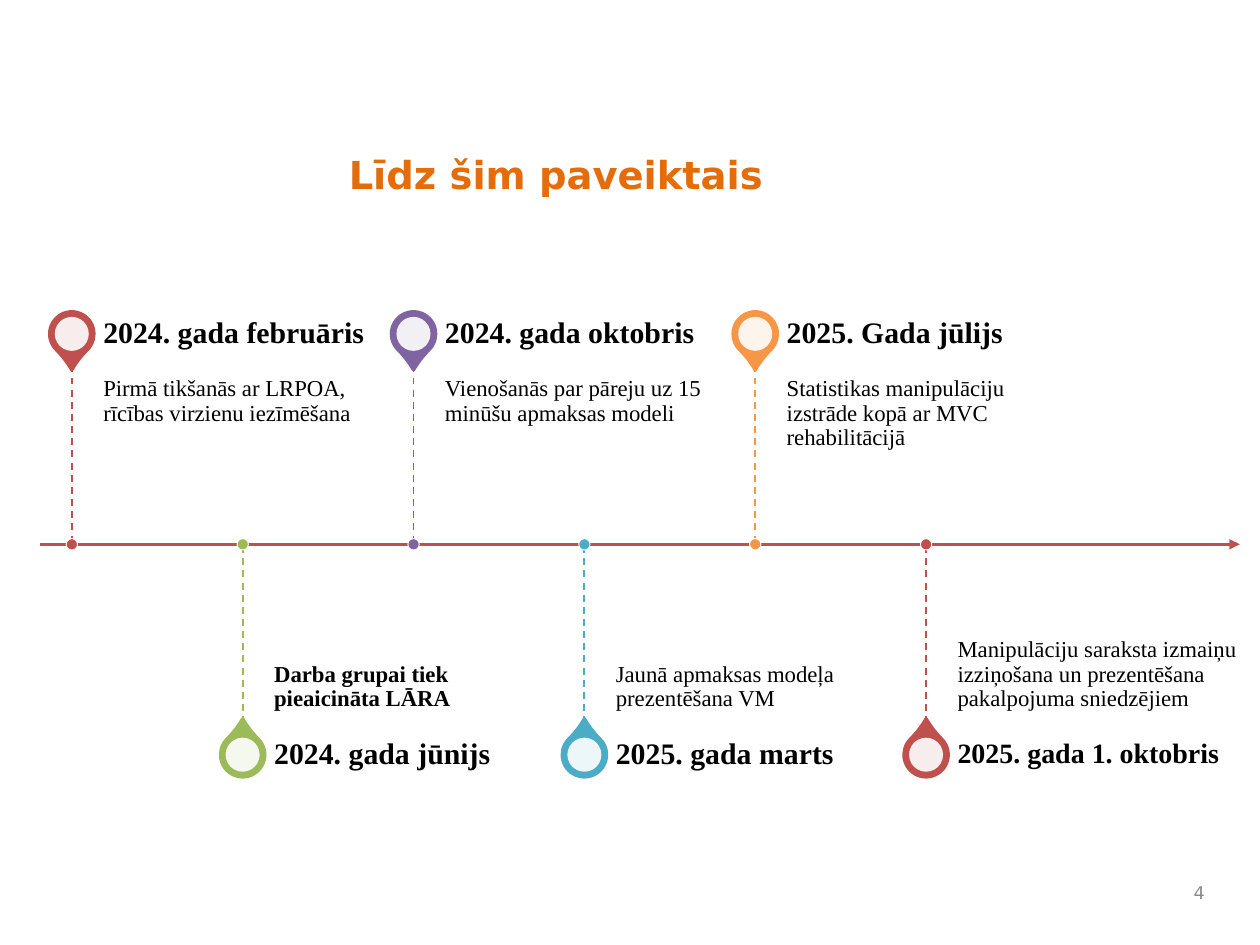
from dataclasses import dataclass

import lxml.etree
import pptx
import pptx.dml.color
import pptx.enum.dml
import pptx.enum.shapes
import pptx.enum.text
import pptx.oxml.ns
import pptx.util

Inches = pptx.util.Inches
Pt = pptx.util.Pt
qn = pptx.oxml.ns.qn
Anchor = pptx.enum.text.MSO_ANCHOR
Align = pptx.enum.text.PP_ALIGN
Preset = pptx.enum.shapes.MSO_SHAPE

COLORS = {
    "title": "E46C0A", "text": "000000", "page": "898989", "white": "FFFFFF",
    "red": "C0504D", "green": "9BBB59", "purple": "8064A2",
    "teal": "4BACC6", "orange": "F79646",
}
SANS = "DejaVu Sans"
SERIF = "Times New Roman"

AXIS_Y = 4.32
FIRST_X, LAST_X = 0.57, 7.35
STEM = 1.42            # from the axis to the date row
DATE_HEIGHT = 0.5
TEXT_WIDTH = 2.23
TEXT_GAP = 0.25        # from the stem to its text
PIN_OFFSET = 0.25      # from the end of the stem to the pin centre
PIN, PIN_HOLE, DOT = 0.35, 0.27, 0.09


@dataclass
class Milestone:
    date: str
    description: str
    color: str
    date_size: int = 17
    bold_description: bool = False


@dataclass
class TextStyle:
    size: int
    font: str = SERIF
    color: str = "text"
    bold: bool = False
    anchor: Anchor = Anchor.TOP
    align: Align = Align.LEFT
    insets: tuple[float, float, float, float] = (0.1, 0.05, 0.1, 0.05)
    line_spacing: float = 1.0


MILESTONES = [
    Milestone("2024. gada februāris",
              "Pirmā tikšanās ar LRPOA, rīcības virzienu iezīmēšana", "red"),
    Milestone("2024. gada jūnijs", "Darba grupai tiek pieaicināta LĀRA",
              "green", bold_description=True),
    Milestone("2024. gada oktobris",
              "Vienošanās par pāreju uz 15 minūšu apmaksas modeli", "purple"),
    Milestone("2025. gada marts", "Jaunā apmaksas modeļa prezentēšana VM", "teal"),
    Milestone("2025. Gada jūlijs",
              "Statistikas manipulāciju izstrāde kopā ar MVC rehabilitācijā", "orange"),
    Milestone("2025. gada 1. oktobris",
              "Manipulāciju saraksta izmaiņu izziņošana un prezentēšana "
              "pakalpojuma sniedzējiem", "red", date_size=16),
]


def rgb(name: str) -> pptx.dml.color.RGBColor:
    return pptx.dml.color.RGBColor.from_string(COLORS[name])


def add_text(slide, text: str, left: float, top: float, width: float,
             height: float, style: TextStyle) -> None:
    box = slide.shapes.add_textbox(Inches(left), Inches(top), Inches(width), Inches(height))
    frame = box.text_frame
    frame.word_wrap = True
    frame.vertical_anchor = style.anchor
    (frame.margin_left, frame.margin_top, frame.margin_right,
     frame.margin_bottom) = [Inches(inset) for inset in style.insets]
    paragraph = frame.paragraphs[0]
    paragraph.alignment = style.align
    paragraph.line_spacing = style.line_spacing
    run = paragraph.add_run()
    run.text = text
    run.font.size = Pt(style.size)
    run.font.name = style.font
    run.font.bold = style.bold
    run.font.color.rgb = rgb(style.color)


def add_line(slide, start: tuple[float, float], end: tuple[float, float],
             color: str, width: float):
    ends = [Inches(value) for value in (*start, *end)]
    connector = slide.shapes.add_connector(
        pptx.enum.shapes.MSO_CONNECTOR.STRAIGHT, *ends)
    connector.line.color.rgb = rgb(color)
    connector.line.width = Pt(width)
    lxml.etree.SubElement(connector._element.spPr, qn("a:effectLst"))
    return connector


def add_centered(slide, preset: Preset, x: float, y: float, size: float,
                 fill: str, line: str | None = None, line_width: float = 0):
    shape = slide.shapes.add_shape(preset, Inches(x - size / 2), Inches(y - size / 2),
                                   Inches(size), Inches(size))
    shape.shadow.inherit = False
    shape.fill.solid()
    shape.fill.fore_color.rgb = rgb(fill)
    if line:
        shape.line.color.rgb = rgb(line)
        shape.line.width = Pt(line_width)
    else:
        shape.line.fill.background()
    return shape


def add_pin(slide, x: float, y: float, color: str, above: bool) -> None:
    pin = add_centered(slide, Preset.TEAR, x, y, PIN, color, color, 2)
    pin.adjustments[0] = 1.15
    pin.rotation = 135 if above else 315
    hole = add_centered(slide, Preset.OVAL, x, y, PIN_HOLE, "white")
    fill_color = hole._element.spPr.find(qn("a:solidFill"))[0]
    lxml.etree.SubElement(fill_color, qn("a:alpha")).set("val", "90000")


def add_milestone(slide, milestone: Milestone, x: float, above: bool) -> None:
    direction = -1 if above else 1
    stem_end = AXIS_Y + direction * STEM
    add_pin(slide, x, stem_end + direction * PIN_OFFSET, milestone.color, above)

    # Description beside the stem, date beside the pin
    add_text(slide, milestone.description, x + TEXT_GAP, min(AXIS_Y, stem_end),
             TEXT_WIDTH, STEM,
             TextStyle(13, bold=milestone.bold_description, line_spacing=0.9,
                       anchor=Anchor.TOP if above else Anchor.BOTTOM,
                       insets=(0, 0.09, 0.09, 0.14) if above else (0, 0.14, 0, 0.09)))
    date_top = stem_end - DATE_HEIGHT if above else stem_end
    add_text(slide, milestone.date, x + TEXT_GAP, date_top, TEXT_WIDTH, DATE_HEIGHT,
             TextStyle(milestone.date_size, bold=True, line_spacing=0.9,
                       anchor=Anchor.MIDDLE, insets=(0, 0, 0.12, 0)))

    # Stem and its dot on the axis
    stem = add_line(slide, (x, stem_end), (x, AXIS_Y), milestone.color, 1)
    stem.line.dash_style = pptx.enum.dml.MSO_LINE.DASH
    add_centered(slide, Preset.OVAL, x, AXIS_Y, DOT, milestone.color, "white", 0.5)


def main() -> None:
    presentation = pptx.Presentation()
    presentation.slide_width = Inches(10)
    presentation.slide_height = Inches(7.5)
    slide = presentation.slides.add_slide(presentation.slide_layouts[6])

    # Title
    add_text(slide, "Līdz šim paveiktais", 2.67, 1.15, 6.67, 1.13,
             TextStyle(22, font=SANS, color="title", bold=True))

    # Time axis
    axis = add_line(slide, (0.32, AXIS_Y), (9.84, AXIS_Y), "red", 1.5)
    lxml.etree.SubElement(axis.line._get_or_add_ln(), qn("a:tailEnd")).set("type", "triangle")

    # Milestones, alternating above and below the axis
    step = (LAST_X - FIRST_X) / (len(MILESTONES) - 1)
    for index, milestone in enumerate(MILESTONES):
        add_milestone(slide, milestone, FIRST_X + index * step, index % 2 == 0)

    # Page number
    add_text(slide, "4", 9.33, 6.92, 0.33, 0.33,
             TextStyle(10, font=SANS, color="page", anchor=Anchor.MIDDLE, align=Align.RIGHT))

    presentation.save("out.pptx")


if __name__ == "__main__":
    main()
